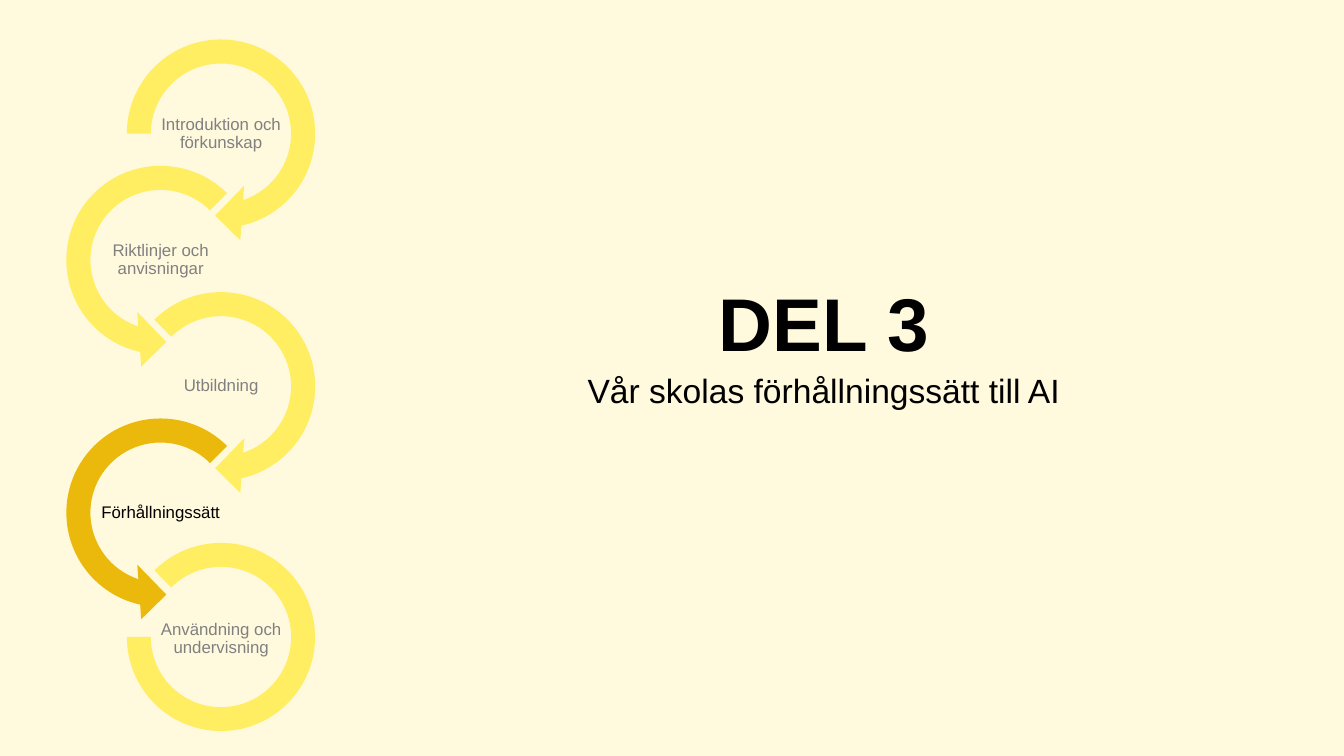
import pptx
import pptx.util
import pptx.dml.color
import pptx.enum.shapes
import pptx.enum.text

Inches = pptx.util.Inches
Pt = pptx.util.Pt
SHAPE = pptx.enum.shapes.MSO_SHAPE
ANCHOR = pptx.enum.text.MSO_ANCHOR
CENTER = pptx.enum.text.PP_ALIGN.CENTER

COLORS = {"background": "FFF9DE", "step": "FFED62", "current": "EAB90C",
          "muted": "808080", "text": "000000"}

# Columns and rows of the chain
RIGHT, LEFT = 0.83, 0.38
TOP, PITCH, ARROW_SIZE = 0.18, 0.94, 1.63
LABEL_DX, LABEL_DY = 0.36, 0.59

# Adjustments of the ring shapes
FIRST_ARROW = (0.11, 11.423, 45, 108, 0.125)
RIGHT_ARROW = (0.11, 11.423, 45, 135, 0.125)
LEFT_ARROW = (0.11, 11.423, 63, 189, 0.125)
LAST_ARC = (135, 108, 0.127)

# Label, column, shape, adjustments, size
STEPS = [
    ("Introduktion och förkunskap", RIGHT, SHAPE.CIRCULAR_ARROW, FIRST_ARROW, ARROW_SIZE),
    ("Riktlinjer och anvisningar", LEFT, SHAPE.LEFT_CIRCULAR_ARROW, LEFT_ARROW, ARROW_SIZE),
    ("Utbildning", RIGHT, SHAPE.CIRCULAR_ARROW, RIGHT_ARROW, ARROW_SIZE),
    ("Förhållningssätt", LEFT, SHAPE.LEFT_CIRCULAR_ARROW, LEFT_ARROW, ARROW_SIZE),
    ("Användning och undervisning", RIGHT, SHAPE.BLOCK_ARC, LAST_ARC, 1.4),
]
CURRENT = "Förhållningssätt"


def rgb(name):
    return pptx.dml.color.RGBColor.from_string(COLORS[name])


def set_attributes(obj, values):
    for name, value in values.items():
        setattr(obj, name, value)


def write_text(sp, text, size, color, anchor, bold=False, spacing=1.0):
    tf = sp.text_frame
    margins = dict.fromkeys(
        ("margin_left", "margin_top", "margin_right", "margin_bottom"), 0)
    set_attributes(tf, {"word_wrap": True, "vertical_anchor": anchor,
                        "auto_size": pptx.enum.text.MSO_AUTO_SIZE.NONE, **margins})
    p = tf.paragraphs[0]
    set_attributes(p, {"alignment": CENTER, "line_spacing": spacing, "space_before": Pt(0)})
    r = p.add_run()
    r.text = text
    set_attributes(r.font, {"name": "Arial", "size": Pt(size), "bold": bold})
    r.font.color.rgb = rgb(color)


def place(sp, left, top, width, height):
    set_attributes(sp, {"left": Inches(left), "top": Inches(top),
                        "width": Inches(width), "height": Inches(height)})


def add_ring(shapes, kind, left, top, size, adjustments, color):
    sp = shapes.add_shape(kind, Inches(left), Inches(top), Inches(size), Inches(size))
    for i, value in enumerate(adjustments):
        sp.adjustments[i] = value
    sp.shadow.inherit = False
    sp.fill.solid()
    sp.fill.fore_color.rgb = rgb(color)
    sp.line.fill.background()


def add_label(shapes, text, left, top, color):
    sp = shapes.add_textbox(Inches(left), Inches(top), Inches(0.91), Inches(0.45))
    write_text(sp, text, 9, color, ANCHOR.MIDDLE, spacing=0.9)


def add_chain(s):
    shapes = s.shapes.add_group_shape().shapes
    for i, (text, left, kind, adjustments, size) in enumerate(STEPS):
        top = TOP + i * PITCH
        # The closing arc is smaller, centred in its column
        shift = (ARROW_SIZE - size) / 2
        ring_top = 4.04 if kind == SHAPE.BLOCK_ARC else top
        current = text == CURRENT
        add_ring(shapes, kind, left + shift, ring_top, size, adjustments,
                 "current" if current else "step")
        add_label(shapes, text, left + LABEL_DX, top + LABEL_DY,
                  "text" if current else "muted")


def add_heading(s):
    title, subtitle = s.placeholders[0], s.placeholders[1]
    place(title, 1.81, 1.52, 8.64, 1.21)
    write_text(title, "DEL 3", 40, "text", ANCHOR.BOTTOM, bold=True)
    place(subtitle, 1.81, 2.75, 8.64, 1.56)
    write_text(subtitle, "Vår skolas förhållningssätt till AI", 18, "text", ANCHOR.TOP)


def main():
    prs = pptx.Presentation()
    # Widescreen, 16:9
    set_attributes(prs, {"slide_width": Inches(10), "slide_height": Inches(10 * 9 / 16)})
    s = prs.slides.add_slide(prs.slide_layouts[0])
    s.background.fill.solid()
    s.background.fill.fore_color.rgb = rgb("background")
    add_heading(s)
    add_chain(s)
    prs.save("out.pptx")


if __name__ == "__main__":
    main()
